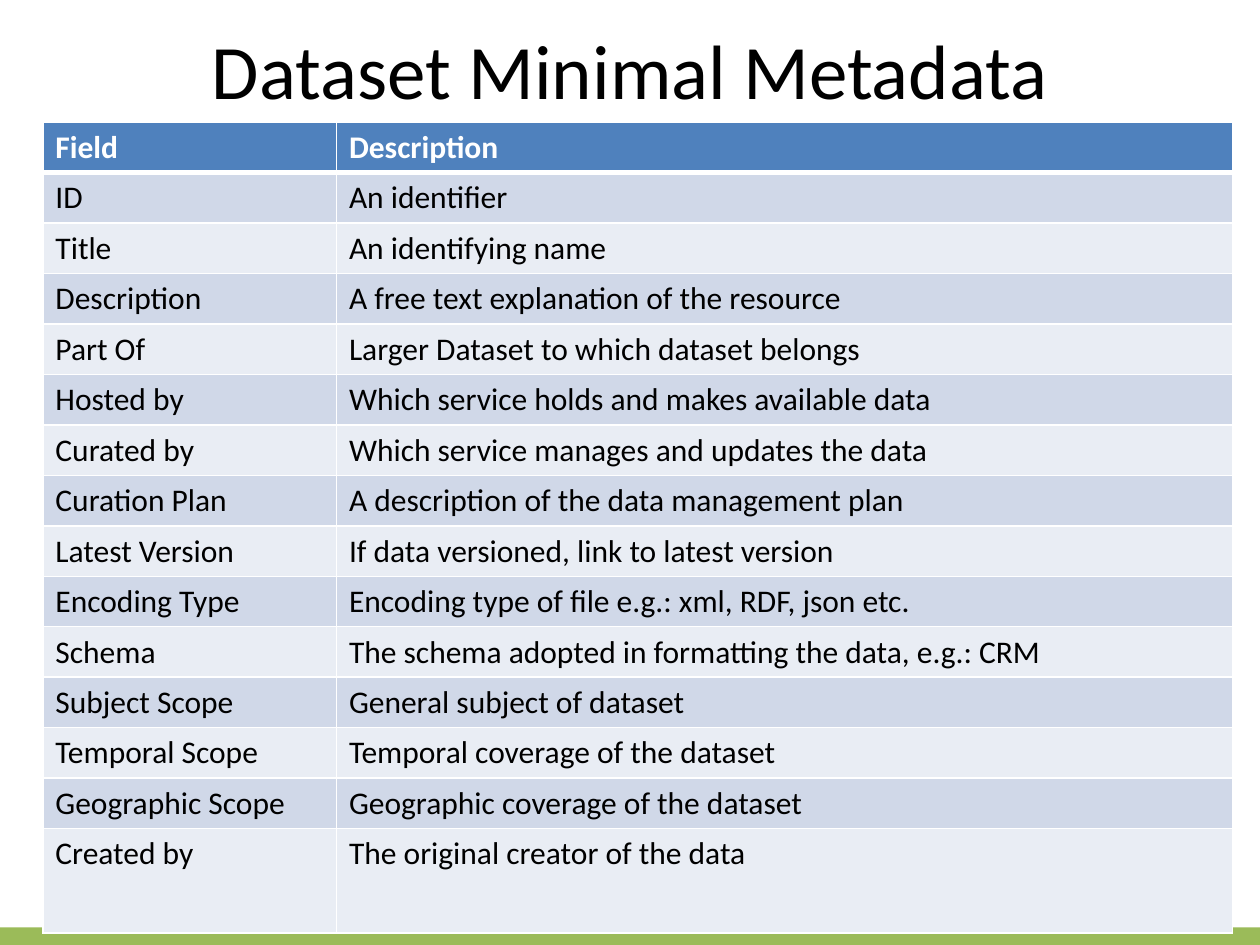
from pptx import Presentation
from pptx.dml.color import RGBColor
from pptx.enum.shapes import MSO_SHAPE
from pptx.enum.text import MSO_ANCHOR, PP_ALIGN
from pptx.oxml.ns import qn
from pptx.util import Inches, Pt
from lxml.etree import SubElement

COLORS = {
    "white": "FFFFFF",
    "black": "000000",
    "footer": "9BBB59",
    "header": "4F81BD",
    "odd": "D0D8E8",
    "even": "E9EDF4",
}
FONT = "Calibri"
COLUMN_WIDTHS = [2.33, 7.11]
HEADER_HEIGHT, ROW_HEIGHT, LAST_HEIGHT = 0.4, 0.38, 0.83
FIELDS = [
    ("Field", "Description"),
    ("ID", "An identifier"),
    ("Title", "An identifying name"),
    ("Description", "A free text explanation of the resource"),
    ("Part Of", "Larger Dataset to which dataset belongs"),
    ("Hosted by", "Which service holds and makes available data"),
    ("Curated by", "Which service manages and updates the data"),
    ("Curation Plan", "A description of the data management plan"),
    ("Latest Version", "If data versioned, link to latest version"),
    ("Encoding Type", "Encoding type of file e.g.: xml, RDF, json etc."),
    ("Schema", "The schema adopted in formatting the data, e.g.: CRM"),
    ("Subject Scope", "General subject of dataset"),
    ("Temporal Scope", "Temporal coverage of the dataset"),
    ("Geographic Scope", "Geographic coverage of the dataset"),
    ("Created by", "The original creator of the data"),
]


def color(name):
    return RGBColor.from_string(COLORS[name])


def style_text(para, size, color_name, bold=False):
    for span in para.runs:
        span.font.name = FONT
        span.font.size = Pt(size)
        span.font.bold = bold
        span.font.color.rgb = color(color_name)


def add_footer_bar(page):
    bar = page.shapes.add_shape(
        MSO_SHAPE.RECTANGLE, Inches(0), Inches(7.36), Inches(10), Inches(0.14))
    bar.shadow.inherit = False
    bar.fill.solid()
    bar.fill.fore_color.rgb = color("footer")
    bar.line.fill.background()


def add_title(page, text):
    box = page.shapes.add_textbox(
        Inches(0.34), Inches(0.03), Inches(9.32), Inches(1.03))
    frame = box.text_frame
    frame.word_wrap = True
    frame.vertical_anchor = MSO_ANCHOR.MIDDLE
    frame.margin_left = frame.margin_right = Inches(0.13)
    frame.margin_top = frame.margin_bottom = Inches(0.13)
    frame.text = text
    para = frame.paragraphs[0]
    para.alignment = PP_ALIGN.CENTER
    style_text(para, 44, "black")


def add_borders(cell, top, bottom):
    properties = cell._tc.get_or_add_tcPr()
    for side, width in (("L", 1), ("R", 1), ("T", top), ("B", bottom)):
        line = SubElement(properties, qn(f"a:ln{side}"), w=str(Pt(width)))
        fill = SubElement(line, qn("a:solidFill"))
        SubElement(fill, qn("a:srgbClr"), val=COLORS["white"])


def style_cell(cell, text, row):
    is_header = row == 0
    cell.text = text
    style_text(cell.text_frame.paragraphs[0], 18,
               "white" if is_header else "black", is_header)
    add_borders(cell, top=3 if row == 1 else 1, bottom=3 if is_header else 1)
    cell.fill.solid()
    band = "odd" if row % 2 else "even"
    cell.fill.fore_color.rgb = color("header" if is_header else band)


def add_field_table(page):
    heights = [HEADER_HEIGHT] + [ROW_HEIGHT] * (len(FIELDS) - 2) + [LAST_HEIGHT]
    table = page.shapes.add_table(
        len(FIELDS), len(COLUMN_WIDTHS), Inches(0.34), Inches(0.97),
        Inches(sum(COLUMN_WIDTHS)), Inches(sum(heights))).table
    for column, width in zip(table.columns, COLUMN_WIDTHS):
        column.width = Inches(width)
    for row, (texts, height) in enumerate(zip(FIELDS, heights)):
        table.rows[row].height = Inches(height)
        for column, text in enumerate(texts):
            style_cell(table.cell(row, column), text, row)


def main():
    deck = Presentation()
    deck.slide_width = Inches(10)
    deck.slide_height = Inches(7.5)
    page = deck.slides.add_slide(deck.slide_layouts[6])
    add_footer_bar(page)
    add_title(page, "Dataset Minimal Metadata")
    add_field_table(page)
    deck.save("out.pptx")


if __name__ == "__main__":
    main()
